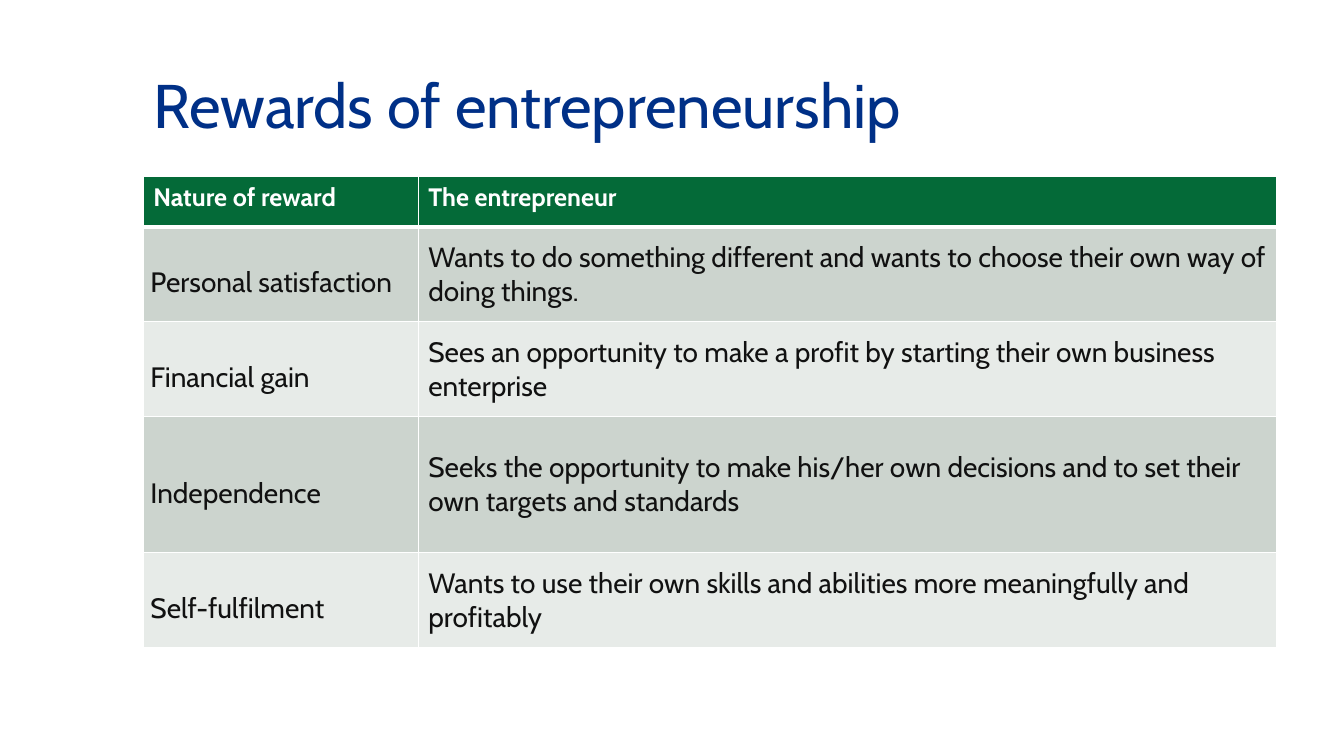
from lxml.etree import SubElement
from pptx import Presentation
from pptx.dml.color import RGBColor
from pptx.enum.text import MSO_ANCHOR
from pptx.oxml.ns import qn
from pptx.util import Cm, Pt

TITLE = "Rewards of entrepreneurship"
ROWS = [
    ("Nature of reward", "The entrepreneur"),
    ("Personal satisfaction",
     "Wants to do something different and wants to choose their own way of doing things."),
    ("Financial gain",
     "Sees an opportunity to make a profit by starting their own business enterprise"),
    ("Independence",
     "Seeks the opportunity to make his/her own decisions and to set their own targets and standards"),
    ("Self-fulfilment",
     "Wants to use their own skills and abilities more meaningfully and profitably"),
]
COLORS = {"title": "003087", "head": "046A38", "odd": "CCD4CE",
          "even": "E7EBE8", "ink": "111111", "white": "FFFFFF"}
FONT = "Cabin"
LEFT, WIDTH = 3.61, 28.57
WIDTHS = (6.93, 21.64)
HEIGHTS = (1.27, 2.39, 2.39, 3.43, 2.39)
PAD = 0.18


def color(name):
    return RGBColor.from_string(COLORS[name])


def style(para, size, name, bold=False):
    for run in para.runs:
        font = run.font
        font.name, font.size, font.bold = FONT, Pt(size), bold
        font.color.rgb = color(name)


def border(cell, head):
    props = cell._tc.get_or_add_tcPr()
    for side in "LRTB":
        width = 3 if head and side == "B" else 1
        line = SubElement(props, qn("a:ln" + side), w=str(Pt(width)))
        fill = SubElement(line, qn("a:solidFill"))
        SubElement(fill, qn("a:srgbClr"), val=COLORS["white"])


def add_title(slide):
    box = slide.shapes.add_textbox(Cm(LEFT), Cm(1.32), Cm(WIDTH), Cm(2.62))
    frame = box.text_frame
    frame.word_wrap = True
    frame.vertical_anchor = MSO_ANCHOR.MIDDLE
    frame.text = TITLE
    style(frame.paragraphs[0], 44, "title")


def fill_cell(cell, text, row, col):
    head = row == 0
    border(cell, head)
    cell.fill.solid()
    cell.fill.fore_color.rgb = color("head" if head else "odd" if row % 2 else "even")
    cell.text_frame.text = text
    para = cell.text_frame.paragraphs[0]
    if head:
        style(para, 18, "white", True)
        return
    style(para, 20, "ink")
    cell.vertical_anchor = MSO_ANCHOR.MIDDLE
    if col == 0:
        cell.margin_left = cell.margin_right = Cm(PAD)
        cell.margin_top = cell.margin_bottom = Cm(PAD)
        para.line_spacing = 1.5
        para.space_after = Pt(10)


def add_grid(slide):
    grid = slide.shapes.add_table(len(ROWS), len(WIDTHS), Cm(LEFT), Cm(4.45),
                                  Cm(WIDTH), Cm(sum(HEIGHTS))).table
    for col, width in enumerate(WIDTHS):
        grid.columns[col].width = Cm(width)
    for row, texts in enumerate(ROWS):
        grid.rows[row].height = Cm(HEIGHTS[row])
        for col, text in enumerate(texts):
            fill_cell(grid.cell(row, col), text, row, col)


def main():
    deck = Presentation()
    deck.slide_width, deck.slide_height = Cm(33.87), Cm(19.05)
    slide = deck.slides.add_slide(deck.slide_layouts[6])
    add_title(slide)
    add_grid(slide)
    deck.save("out.pptx")


if __name__ == "__main__":
    main()
